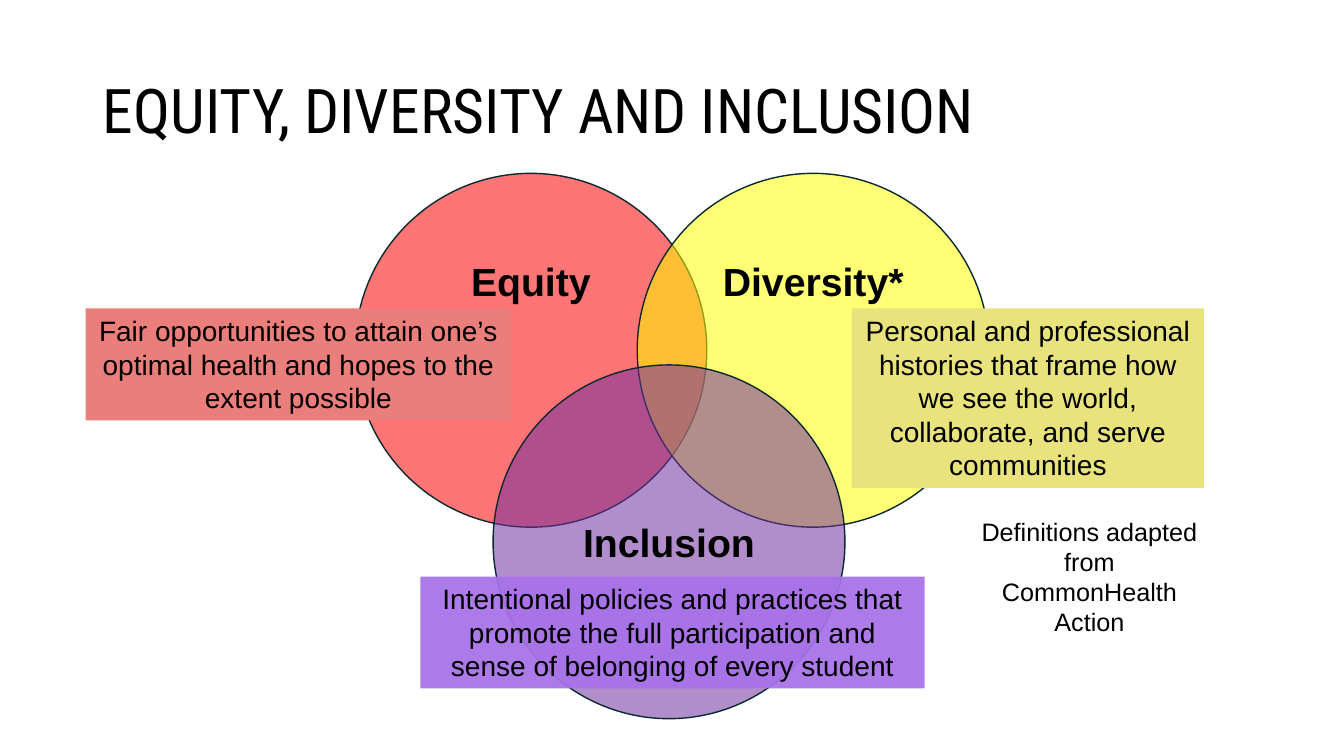
"""Build a slide with a three-circle diagram of equity, diversity and inclusion."""
from dataclasses import dataclass

from lxml import etree
from pptx import Presentation
from pptx.dml.color import RGBColor
from pptx.enum.shapes import MSO_SHAPE as Shape
from pptx.enum.text import MSO_ANCHOR as Anchor, MSO_AUTO_SIZE as AutoSize, PP_ALIGN as Align
from pptx.oxml.ns import qn
from pptx.util import Inches, Pt

CIRCLE_W, CIRCLE_H = 3.49, 3.51


@dataclass
class Circle:
    label: str
    x: float
    y: float
    color: str
    lift: float = 0


@dataclass
class Definition:
    text: str
    x: float
    y: float
    w: float
    h: float
    color: str = ""
    size: int = 20
    opacity: int = 100


CIRCLES = [
    Circle("Equity", 3.52, 1.72, "FF0000", 0.69),
    Circle("Diversity*", 6.32, 1.72, "FFFF00", 0.69),
    Circle("Inclusion", 4.89, 3.62, "7030A0"),
]

DEFINITIONS = [
    Definition("Intentional policies and practices that promote the full participation "
               "and sense of belonging of every student", 4.17, 5.72, 5, 1.11, "A772E8", opacity=94),
    Definition("Fair opportunities to attain one’s optimal health and hopes to the "
               "extent possible", 0.85, 3.06, 4.22, 1.11, "E97E7B"),
    Definition("Definitions adapted from CommonHealth Action", 9.63, 5.07, 2.35, 1.31, size=18),
    Definition("Personal and professional histories that frame how we see the world, "
               "collaborate, and serve communities", 8.45, 3.06, 3.49, 1.78, "E9E37D"),
]


def rgb(color: str) -> RGBColor:
    return RGBColor.from_string(color)


def set_fill(sp, color: str, opacity: int = 100) -> None:
    sp.fill.solid()
    sp.fill.fore_color.rgb = rgb(color)
    if opacity < 100:
        clr = sp.fill._xPr.find(f"{qn('a:solidFill')}/{qn('a:srgbClr')}")
        etree.SubElement(clr, qn("a:alpha")).set("val", str(opacity * 1000))


def set_text(sp, text: str, size: int, font: str = "Arial", bold: bool = False,
             align: Align = Align.CENTER, anchor: Anchor = Anchor.MIDDLE) -> None:
    tf = sp.text_frame
    tf.text = text
    tf.word_wrap = True
    tf.vertical_anchor = anchor
    p = tf.paragraphs[0]
    p.alignment = align
    f = p.runs[0].font
    f.name, f.size, f.bold = font, Pt(size), bold
    f.color.rgb = rgb("000000")


def add_title(slide, text: str) -> None:
    sp = slide.shapes.title
    sp.left, sp.top, sp.width, sp.height = map(Inches, (0.92, 0.4, 11.5, 1.45))
    set_text(sp, text, 44, "Roboto Condensed", align=Align.LEFT)
    sp.text_frame.auto_size = AutoSize.NONE
    sp.text_frame.paragraphs[0].line_spacing = 0.9


def add_circle(slide, c: Circle) -> None:
    sp = slide.shapes.add_shape(Shape.OVAL, *map(Inches, (c.x, c.y, CIRCLE_W, CIRCLE_H)))
    sp.shadow.inherit = False
    set_fill(sp, c.color, 54)
    sp.line.color.rgb = rgb("0A2930")
    sp.line.width = Pt(1)
    set_text(sp, c.label, 28, bold=True)
    sp.text_frame.margin_bottom = Inches(0.05 + 2 * c.lift)


def add_definition(slide, d: Definition) -> None:
    box = tuple(map(Inches, (d.x, d.y, d.w, d.h)))
    if d.color:
        sp = slide.shapes.add_shape(Shape.RECTANGLE, *box)
        sp.shadow.inherit = False
        set_fill(sp, d.color, d.opacity)
        sp.line.fill.background()
    else:
        sp = slide.shapes.add_textbox(*box)
    set_text(sp, d.text, d.size, anchor=Anchor.TOP)
    sp.text_frame.auto_size = AutoSize.SHAPE_TO_FIT_TEXT


def main() -> None:
    prs = Presentation()
    prs.slide_width, prs.slide_height = Inches(13.33), Inches(7.5)
    slide = prs.slides.add_slide(prs.slide_layouts.get_by_name("Title Only"))
    add_title(slide, "EQUITY, DIVERSITY AND INCLUSION")
    for c in CIRCLES:
        add_circle(slide, c)
    for d in DEFINITIONS:
        add_definition(slide, d)
    prs.save("out.pptx")


if __name__ == "__main__":
    main()
